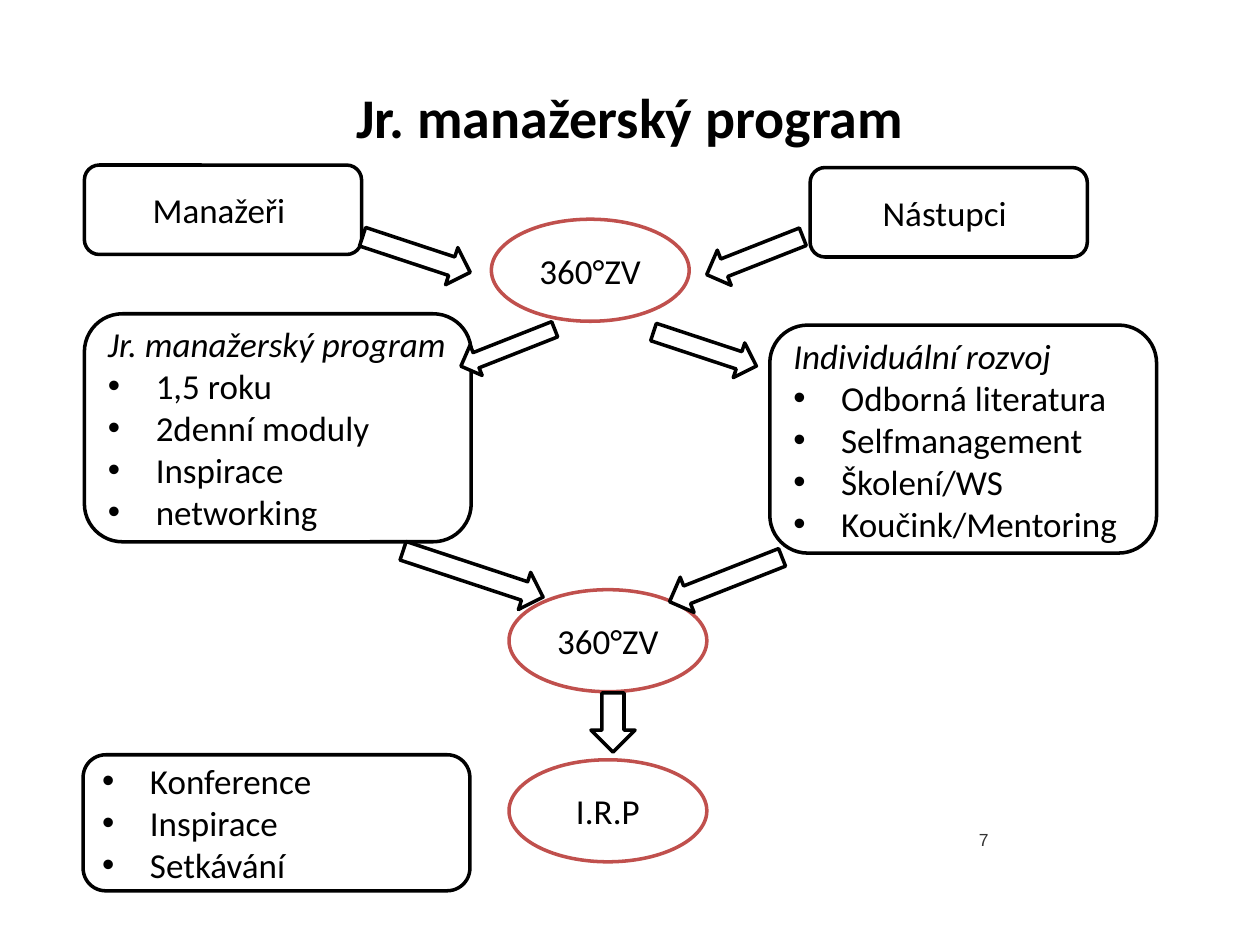
from lxml.etree import SubElement
from pptx import Presentation
from pptx.dml.color import RGBColor
from pptx.enum.shapes import MSO_SHAPE
from pptx.enum.text import MSO_ANCHOR, PP_ALIGN
from pptx.oxml.ns import qn
from pptx.util import Inches, Pt

COLORS = {"black": "000000", "white": "FFFFFF", "red": "C0504D", "gray": "333333"}
COLS, ROWS = 100, 75  # slide grid
RIGHT_DOWN, LEFT_DOWN, DOWN = 288.3, 68.5, 0  # arrow rotations


class Diagram:
    font, size, line_width = "Calibri", 20, 2
    oval_size, label_size = (15.7, 8.1), (22, 7.1)
    panel_width = 30.7

    def __init__(self, prs):
        self.cell_w = prs.slide_width / COLS
        self.cell_h = prs.slide_height / ROWS
        self.s = prs.slides.add_slide(prs.slide_layouts[6])

    def box(self, x, y, w, h):
        return (round(x * self.cell_w), round(y * self.cell_h),
                round(w * self.cell_w), round(h * self.cell_h))

    def add_run(self, p, text, size=None, font=None, color="black", bold=False, italic=False):
        r = p.add_run()
        r.text = text
        r.font.name = font or self.font
        r.font.size = Pt(size or self.size)
        r.font.bold, r.font.italic = bold, italic
        r.font.color.rgb = RGBColor.from_string(COLORS[color])

    def text(self, at, text, align=PP_ALIGN.LEFT, anchor=MSO_ANCHOR.TOP, **style):
        tf = self.s.shapes.add_textbox(*self.box(*at)).text_frame
        tf.word_wrap, tf.vertical_anchor = True, anchor
        tf.paragraphs[0].alignment = align
        self.add_run(tf.paragraphs[0], text, **style)

    def shape(self, kind, at, line="black"):
        sp = self.s.shapes.add_shape(kind, *self.box(*at))
        sp.shadow.inherit = False
        sp.fill.solid()
        sp.fill.fore_color.rgb = RGBColor.from_string(COLORS["white"])
        sp.line.color.rgb = RGBColor.from_string(COLORS[line])
        sp.line.width = Pt(self.line_width)
        return sp

    def centred(self, sp, text):
        tf = sp.text_frame
        tf.vertical_anchor = MSO_ANCHOR.MIDDLE
        tf.paragraphs[0].alignment = PP_ALIGN.CENTER
        self.add_run(tf.paragraphs[0], text)

    def label(self, x, y, text):
        at = (x, y, *self.label_size)
        self.centred(self.shape(MSO_SHAPE.ROUNDED_RECTANGLE, at), text)

    def oval(self, x, y, text):
        self.centred(self.shape(MSO_SHAPE.OVAL, (x, y, *self.oval_size), "red"), text)

    def arrow(self, at, rotation):
        self.shape(MSO_SHAPE.DOWN_ARROW, at).rotation = rotation

    def panel(self, x, y, h, items, heading=None):
        sp = self.shape(MSO_SHAPE.ROUNDED_RECTANGLE, (x, y, self.panel_width, h))
        tf = sp.text_frame
        tf.word_wrap, tf.vertical_anchor = True, MSO_ANCHOR.MIDDLE
        lines = ([heading] if heading else []) + items
        for i, line in enumerate(lines):
            p = tf.add_paragraph() if i else tf.paragraphs[0]
            p.alignment = PP_ALIGN.LEFT
            is_heading = line is heading
            if not is_heading:
                self.bullet(p)
            self.add_run(p, line, italic=is_heading)

    def bullet(self, p):
        pPr = p._p.get_or_add_pPr()
        indent = Inches(0.38)
        pPr.set("marL", str(indent))
        pPr.set("indent", str(-indent))
        SubElement(pPr, qn("a:buFont")).set("typeface", "Arial")
        SubElement(pPr, qn("a:buChar")).set("char", "•")


def main():
    prs = Presentation()
    prs.slide_width, prs.slide_height = Inches(10), Inches(7.5)
    d = Diagram(prs)

    # Page number and title
    d.text((76.7, 65.3, 5, 2.7), "7", size=10, font="Arial", color="gray")
    d.text((5, 3, 90, 12.5), "Jr. manažerský program", PP_ALIGN.CENTER,
           MSO_ANCHOR.MIDDLE, size=32, bold=True)

    # Participants and first feedback
    d.label(6.7, 13.1, "Manažeři ")
    d.label(64.3, 13.3, "Nástupci ")
    d.oval(39, 17.4, "360°ZV")

    # Two development paths
    d.panel(6.7, 24.9, 18.1, ["1,5 roku", "2denní moduly", "Inspirace", "networking"],
            "Jr. manažerský program")
    d.panel(61.1, 25.8, 18.1, ["Odborná literatura", "Selfmanagement", "Školení/WS",
                               "Koučink/Mentoring"], "Individuální rozvoj")

    # Arrows into and out of the first feedback
    d.arrow((31.5, 15.7, 3.1, 9), RIGHT_DOWN)
    d.arrow((58.4, 16.2, 3, 8.2), LEFT_DOWN)
    d.arrow((39, 23.6, 2.6, 8), LEFT_DOWN)
    d.arrow((54.5, 23.4, 2.9, 8.6), RIGHT_DOWN)

    # Second feedback and result
    d.oval(40.4, 46.8, "360°ZV")
    d.arrow((36, 39.7, 3.1, 11.7), RIGHT_DOWN)
    d.arrow((56.1, 41.2, 3, 9.6), LEFT_DOWN)
    d.oval(40.4, 60.3, "I.R.P")
    d.arrow((46.9, 55, 3.5, 4.7), DOWN)

    # Follow-up events
    d.panel(6.6, 59.9, 10.8, ["Konference", "Inspirace", "Setkávání"])

    prs.save("out.pptx")


if __name__ == "__main__":
    main()
